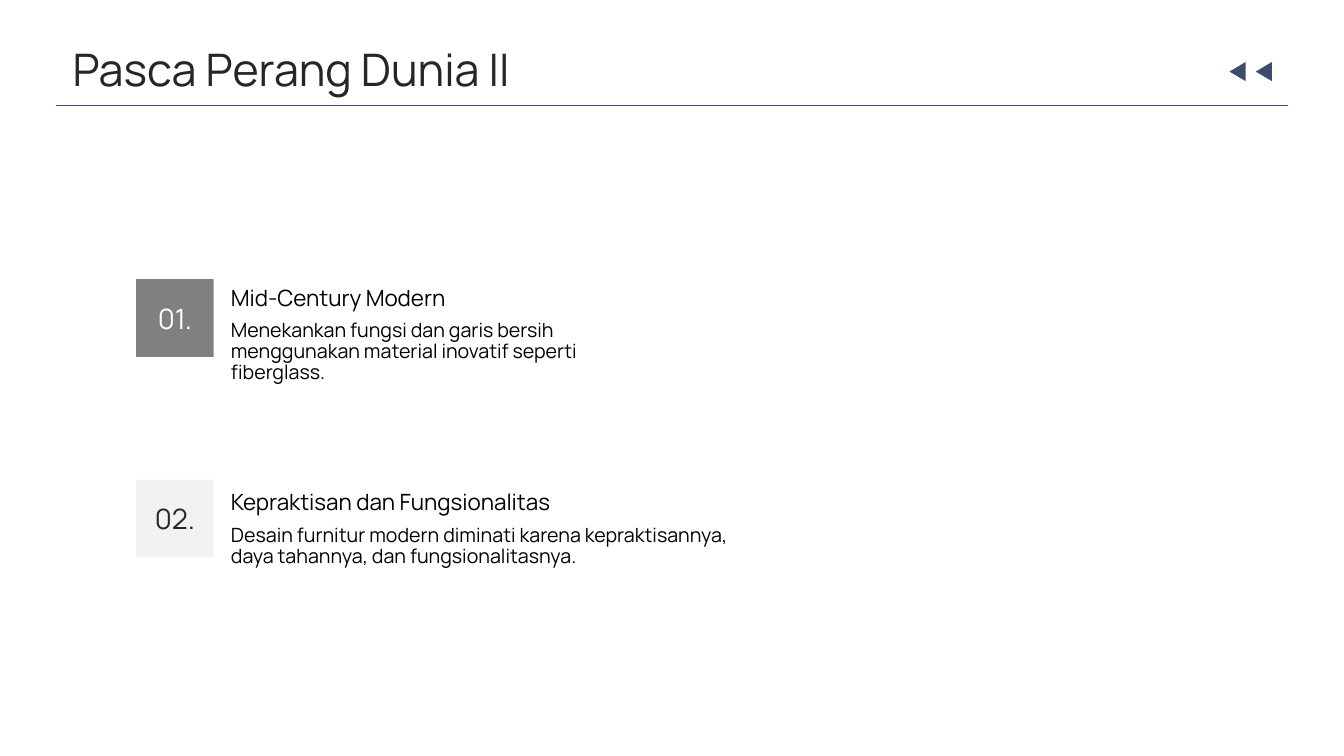
"""Builds a slide on furniture design after the Second World War."""
import dataclasses

import lxml.etree
import pptx
import pptx.dml.color
import pptx.enum.shapes
import pptx.enum.text
import pptx.oxml.ns
import pptx.util

SHAPE = pptx.enum.shapes.MSO_SHAPE
ANCHOR = pptx.enum.text.MSO_ANCHOR
ALIGN = pptx.enum.text.PP_ALIGN


@dataclasses.dataclass(frozen=True)
class Theme:
    """Holds the font, colours and type sizes."""
    font: str = "Manrope"
    ink: str = "262626"
    black: str = "000000"
    white: str = "FFFFFF"
    accent: str = "3C4C6B"
    dark_tile: str = "808080"
    light_tile: str = "F2F2F2"
    title_size: int = 32
    number_size: int = 20
    heading_size: int = 16
    body_size: int = 14
    rule_width: float = 0.75
    spacing: float = 0.9


class SlideBuilder:
    """Draws themed elements on one slide, measured at 100 px to the inch."""

    def __init__(self, deck, theme):
        """Adds a slide that has only a title."""
        self.theme = theme
        self.slide = deck.slides.add_slide(deck.slide_layouts[5])

    @staticmethod
    def px(length):
        """Turns px into EMU."""
        return pptx.util.Emu(length * 9144)

    @staticmethod
    def rgb(colour):
        """Turns a hex string into a colour."""
        return pptx.dml.color.RGBColor.from_string(colour)

    def set_text(self, shape, wording, size, colour, anchor, align=ALIGN.LEFT, spacing=None):
        """Sets and formats the text of a shape."""
        frame = shape.text_frame
        frame.text = wording
        frame.word_wrap = True
        frame.auto_size = pptx.enum.text.MSO_AUTO_SIZE.NONE
        frame.vertical_anchor = anchor
        frame.margin_left = frame.margin_right = 0
        frame.margin_top = frame.margin_bottom = 0
        paragraph = frame.paragraphs[0]
        paragraph.alignment = align
        paragraph.line_spacing = spacing or self.theme.spacing
        font = paragraph.runs[0].font
        font.name = self.theme.font
        font.size = pptx.util.Pt(size)
        font.color.rgb = self.rgb(colour)

    def title(self, wording, left, top, width, height):
        """Moves and fills the title placeholder."""
        heading = self.slide.shapes.title
        heading.left, heading.top = self.px(left), self.px(top)
        heading.width, heading.height = self.px(width), self.px(height)
        self.set_text(heading, wording, self.theme.title_size, self.theme.ink, ANCHOR.MIDDLE)

    def text(self, wording, left, top, width, height, size, anchor):
        """Adds a text box."""
        box = self.slide.shapes.add_textbox(*map(self.px, (left, top, width, height)))
        self.set_text(box, wording, size, self.theme.black, anchor)

    def shape(self, preset, left, top, width, height, fill):
        """Adds a filled shape without an outline."""
        figure = self.slide.shapes.add_shape(
            preset, *map(self.px, (left, top, width, height)))
        figure.shadow.inherit = False
        figure.fill.solid()
        figure.fill.fore_color.rgb = self.rgb(fill)
        figure.line.fill.background()
        return figure

    def number_tile(self, number, left, top, side, fill, colour):
        """Adds a square that carries a number."""
        tile = self.shape(SHAPE.RECTANGLE, left, top, side, side, fill)
        self.set_text(tile, number, self.theme.number_size, colour,
                      ANCHOR.MIDDLE, ALIGN.CENTER, 1.0)

    def back_arrow(self, left, top, width, height):
        """Adds a triangle that points left."""
        arrow = self.shape(SHAPE.ISOSCELES_TRIANGLE, left, top, width, height,
                           self.theme.accent)
        arrow.rotation = 270

    def rule(self, left, right, y):
        """Adds a thin horizontal line."""
        line = self.slide.shapes.add_connector(
            pptx.enum.shapes.MSO_CONNECTOR.STRAIGHT,
            *map(self.px, (left, y, right, y)))
        line.line.color.rgb = self.rgb(self.theme.accent)
        line.line.width = pptx.util.Pt(self.theme.rule_width)
        lxml.etree.SubElement(line._element.spPr, pptx.oxml.ns.qn("a:effectLst"))


def main():
    """Builds and saves the slide."""
    theme = Theme()
    deck = pptx.Presentation()
    deck.slide_width = SlideBuilder.px(1333)
    deck.slide_height = SlideBuilder.px(750)
    page = SlideBuilder(deck, theme)

    page.title("Pasca Perang Dunia II", 72, 46, 1188, 51)
    page.rule(56, 1277, 105)
    for arrow_left in (1218, 1244):
        page.back_arrow(arrow_left, 63, 19, 16)

    topics = [
        ("01.", 277, theme.dark_tile, theme.white, 394, 279, 318, "Mid-Century Modern",
         "Menekankan fungsi dan garis bersih menggunakan material inovatif "
         "seperti fiberglass."),
        ("02.", 476, theme.light_tile, theme.ink, 509, 481, 521,
         "Kepraktisan dan Fungsionalitas",
         "Desain furnitur modern diminati karena kepraktisannya, daya tahannya, "
         "dan fungsionalitasnya."),
    ]
    for (number, tile_top, fill, colour, width, heading_top, detail_top,
         heading, detail) in topics:
        page.number_tile(number, 135, tile_top, 77, fill, colour)
        page.text(heading, 229, heading_top, width, 30, theme.heading_size, ANCHOR.BOTTOM)
        page.text(detail, 229, detail_top, width, 109, theme.body_size, ANCHOR.TOP)

    deck.save("out.pptx")


if __name__ == "__main__":
    main()
